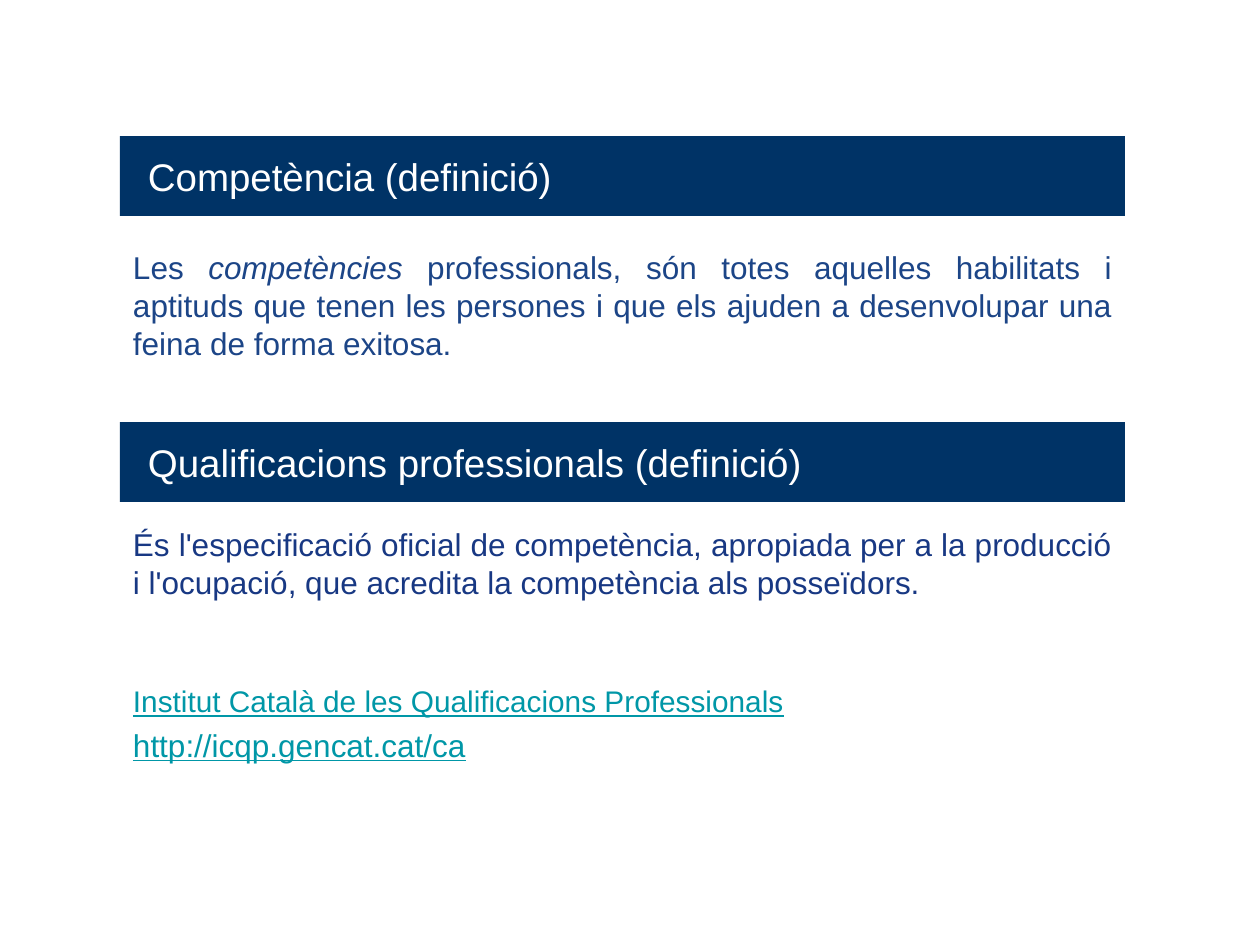
from pptx import Presentation
from pptx.dml.color import RGBColor
from pptx.enum.shapes import MSO_SHAPE as Shape
from pptx.enum.text import MSO_ANCHOR as Anchor, MSO_AUTO_SIZE as AutoSize, PP_ALIGN as Align
from pptx.oxml.xmlchemy import OxmlElement
from pptx.util import Emu, Pt

LEFT, WIDTH, BAR_HEIGHT = 120, 1005, 80
NAVY, WHITE, TEAL = "003366", "FFFFFF", "0097A7"
BLUE, INDIGO = "1C4587", "183883"
BODY = {"size": 18, "color": BLUE}
SPEC = {**BODY, "color": INDIGO}
LINK = {"color": TEAL, "underline": True}

BARS = [
    (136, "Competència (definició)"),
    (422, "Qualificacions professionals (definició)"),
]
TEXTS = [
    (242, 127, [
        ({"alignment": Align.JUSTIFY}, [
            ("Les ", BODY),
            ("competències", {**BODY, "italic": True}),
            (" professionals, són totes aquelles habilitats i aptituds que tenen "
             "les persones i que els ajuden a desenvolupar una feina de forma exitosa.", BODY),
        ]),
    ]),
    (519, 309, [
        ({"alignment": Align.JUSTIFY}, [
            ("És l'especificació oficial de competència, apropiada per a la producció "
             "i l'ocupació, que acredita la competència als posseïdors.", SPEC),
        ]),
        ({"alignment": Align.LEFT, "line_spacing": 1.15, "space_before": Pt(44)}, [
            ("Institut Català de les Qualificacions Professionals", {**LINK, "size": 17}),
        ]),
        ({"alignment": Align.JUSTIFY, "space_before": Pt(4)}, [
            ("http://icqp.gencat.cat/ca", {**LINK, "size": 18}),
        ]),
    ]),
]


def px(length):
    return Emu(round(length * 914400 / 126))


def rgb(color):
    return RGBColor.from_string(color)


def set_all(target, values):
    for name, value in values.items():
        setattr(target, name, value)


def place(box, top, height, inset, anchor):
    set_all(box, {"left": px(LEFT), "top": px(top), "width": px(WIDTH), "height": px(height)})
    set_all(box.text_frame, {
        "word_wrap": True, "auto_size": AutoSize.NONE, "vertical_anchor": anchor,
        "margin_left": px(inset), "margin_right": px(13),
        "margin_top": px(6), "margin_bottom": px(6),
    })


def write(box, paragraphs):
    frame = box.text_frame
    for number, (layout, spans) in enumerate(paragraphs):
        para = frame.add_paragraph() if number else frame.paragraphs[0]
        set_all(para, {"space_before": Pt(0), "line_spacing": 1.0, **layout})
        properties = para._p.get_or_add_pPr()
        properties.set("marL", "0")
        properties.set("indent", "0")
        properties.append(OxmlElement("a:buNone"))
        for text, look in spans:
            span = para.add_run()
            span.text = text
            font = {"name": "Arial", **look, "size": Pt(look["size"])}
            span.font.color.rgb = rgb(font.pop("color"))
            set_all(span.font, font)


def main():
    deck = Presentation()
    set_all(deck, {"slide_width": px(1260), "slide_height": px(945)})
    page = deck.slides.add_slide(deck.slide_layouts.get_by_name("Two Content"))
    title, *bodies = list(page.placeholders)[:3]
    second_bar = page.shapes.add_shape(Shape.RECTANGLE, 0, 0, px(WIDTH), px(BAR_HEIGHT))
    second_bar.shadow.inherit = False
    second_bar.line.fill.background()

    for bar, (top, heading) in zip((title, second_bar), BARS):
        place(bar, top, BAR_HEIGHT, 28, Anchor.MIDDLE)
        bar.fill.solid()
        bar.fill.fore_color.rgb = rgb(NAVY)
        write(bar, [({"alignment": Align.LEFT}, [(heading, {"size": 22, "color": WHITE})])])

    for body, (top, height, paragraphs) in zip(bodies, TEXTS):
        place(body, top, height, 13, Anchor.TOP)
        write(body, paragraphs)

    deck.save("out.pptx")


if __name__ == "__main__":
    main()
